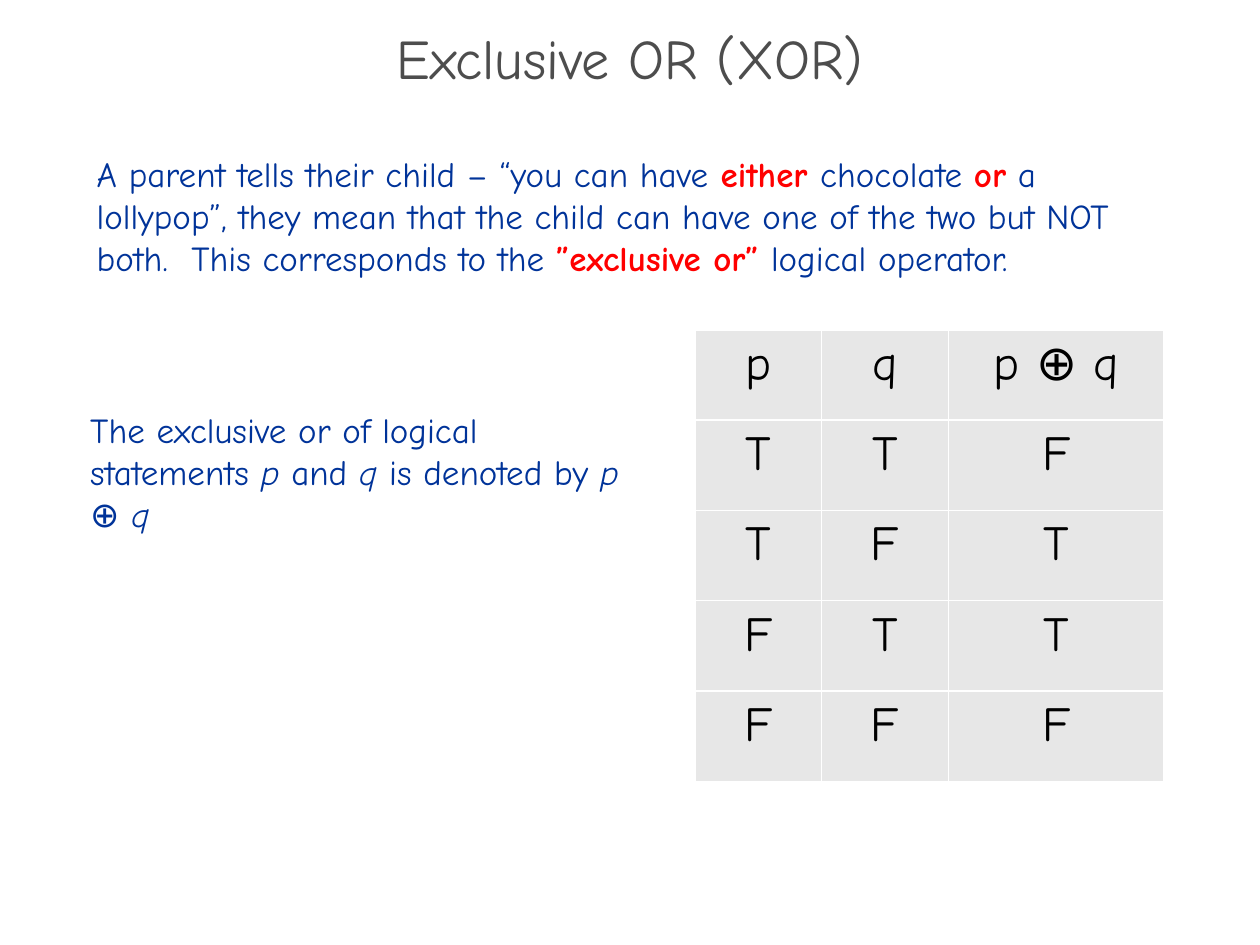
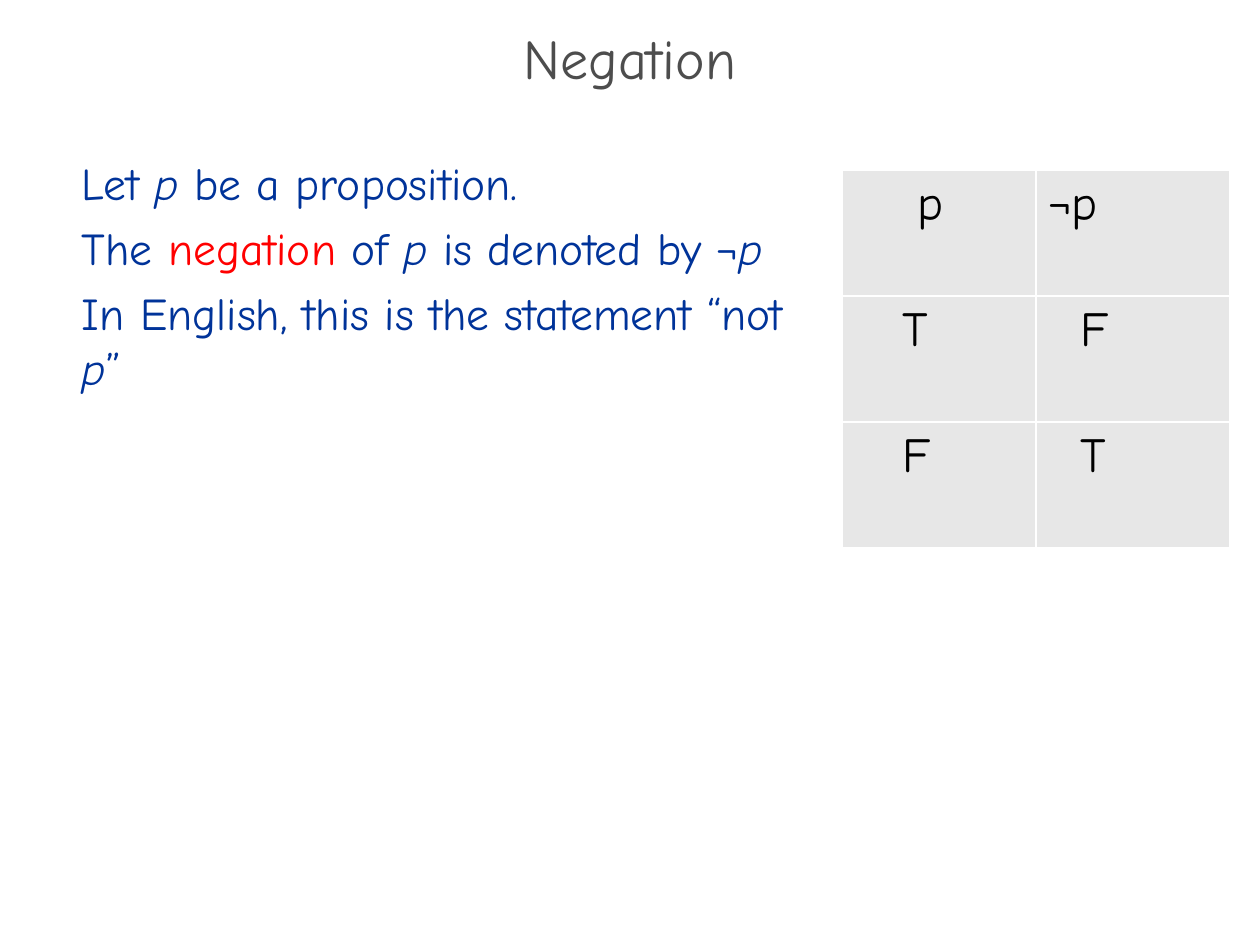
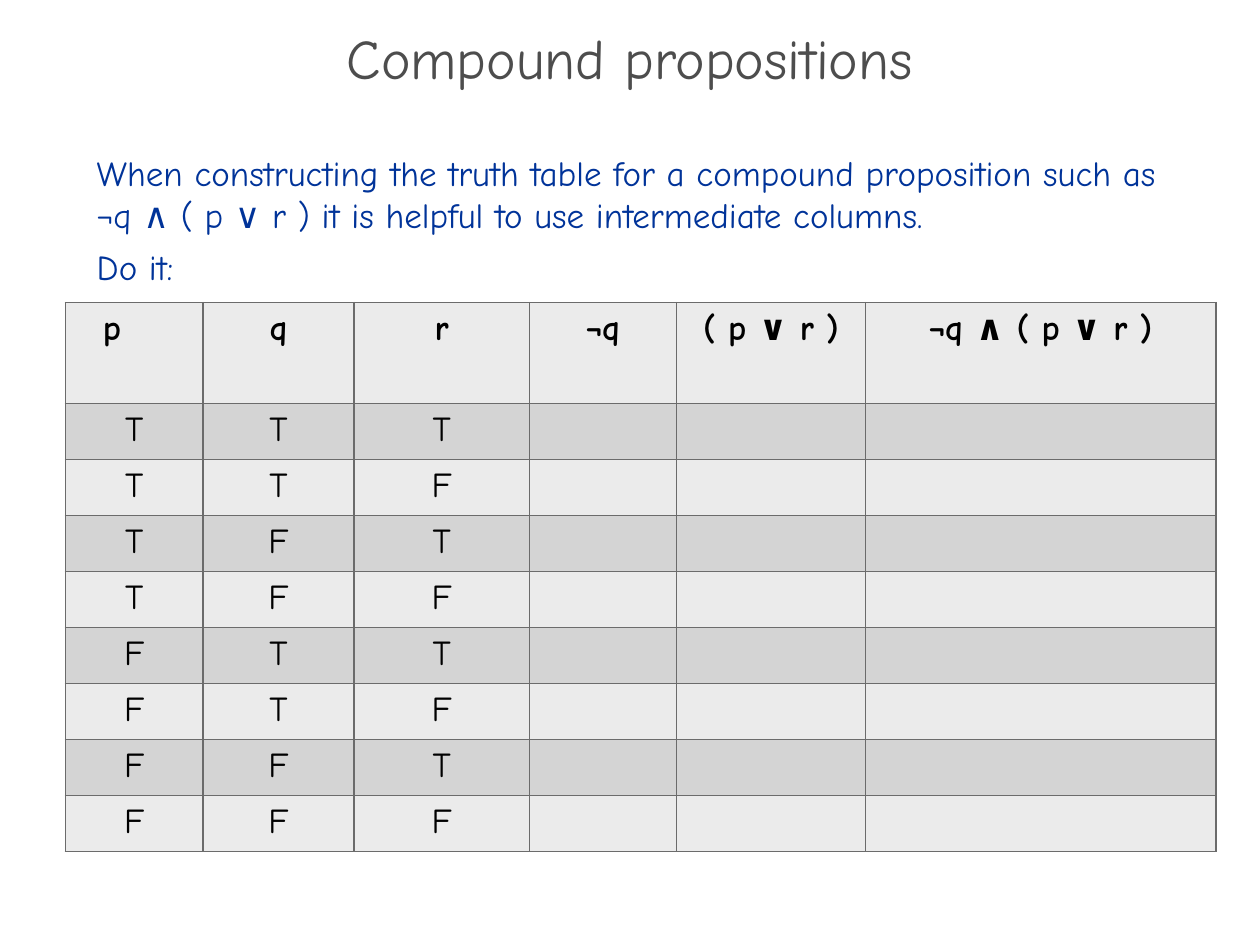
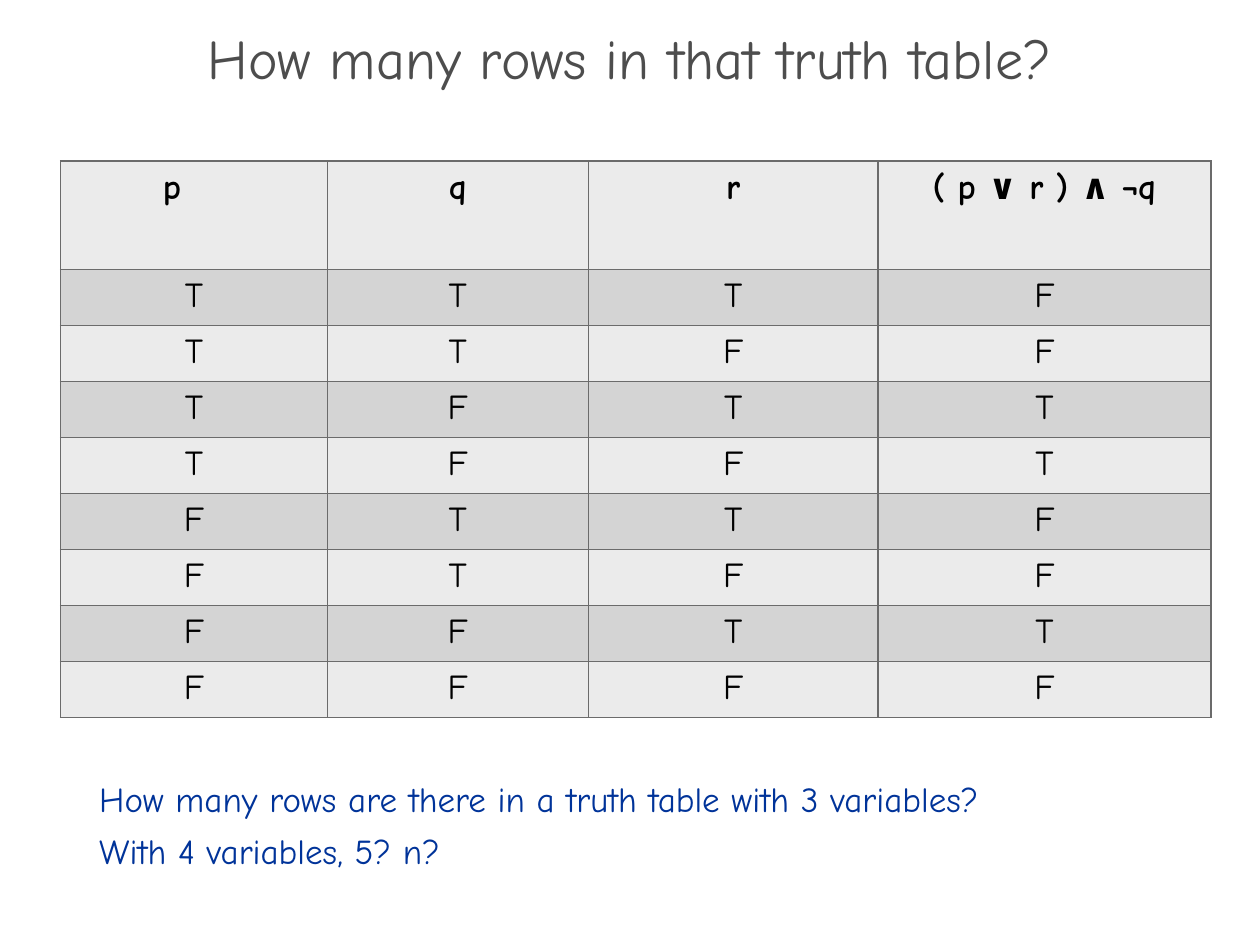
from itertools import product

from pptx import Presentation
from pptx.dml.color import RGBColor
from pptx.enum.text import MSO_ANCHOR, MSO_AUTO_SIZE, PP_ALIGN
from pptx.oxml import parse_xml
from pptx.oxml.ns import nsdecls
from pptx.util import Cm, Pt

# Shared style
FONT = "Comic Neue"
TITLE_GREY = RGBColor(0x4D, 0x4D, 0x4D)
TEXT_BLUE = RGBColor(0x00, 0x33, 0x99)
ACCENT_RED = RGBColor(0xFF, 0x00, 0x00)
BLACK = RGBColor(0x00, 0x00, 0x00)
WHITE = RGBColor(0xFF, 0xFF, 0xFF)
PLAIN_GREY = RGBColor(0xE7, 0xE7, 0xE7)
LIGHT_BAND = RGBColor(0xEB, 0xEB, 0xEB)
DARK_BAND = RGBColor(0xD4, 0xD4, 0xD4)
GRID_GREY = RGBColor(0x6B, 0x6B, 0x6B)

ITALIC = {"italic": True}
RED = {"color": ACCENT_RED}
RED_BOLD = {"color": ACCENT_RED, "bold": True}

# Table looks: fills alternate from the header row down
PLAIN_TABLE = {"fills": [PLAIN_GREY], "border": WHITE, "size": 28, "space_before": Pt(5.6)}
BANDED_TABLE = {"fills": [LIGHT_BAND, DARK_BAND], "border": GRID_GREY, "size": 20,
                "header_bold": True}


def set_attributes(target, values):
    for name, value in values.items():
        setattr(target, name, value)


def letter(value):
    return "T" if value else "F"


class Deck:
    def __init__(self):
        self.presentation = Presentation()
        set_attributes(self.presentation,
                       {"slide_width": Cm(25.4), "slide_height": Cm(19.05)})
        self.slide = None

    def add_slide(self, title):
        layout = self.presentation.slide_layouts[1]
        self.slide = self.presentation.slides.add_slide(layout)
        shape = self.slide.shapes.title
        self.place(shape, (0, 0.69, 25.4, 1.27))
        shape.text_frame.vertical_anchor = MSO_ANCHOR.MIDDLE
        self.add_runs(shape.text_frame.paragraphs[0], [title], 32, TITLE_GREY,
                      alignment=PP_ALIGN.CENTER, line_spacing=0.7)

    def place(self, shape, box):
        names = ("left", "top", "width", "height")
        set_attributes(shape, dict(zip(names, map(Cm, box))))
        set_attributes(shape.text_frame, {
            "word_wrap": True, "auto_size": MSO_AUTO_SIZE.NONE,
            "margin_left": Cm(0.25), "margin_right": Cm(0.25),
            "margin_top": Cm(0.13), "margin_bottom": Cm(0.13)})

    def add_runs(self, paragraph, runs, size, color, bold=False, **layout):
        """Runs are plain strings or pairs of text and format values."""
        set_attributes(paragraph, layout)
        for item in runs:
            text, changes = (item, {}) if isinstance(item, str) else item
            values = {"name": FONT, "size": Pt(size), "bold": bold, "color": color, **changes}
            run = paragraph.add_run()
            run.text = text
            run.font.color.rgb = values.pop("color")
            set_attributes(run.font, values)

    def fill_text(self, shape, box, paragraphs, size):
        self.place(shape, box)
        frame = shape.text_frame
        frame.vertical_anchor = MSO_ANCHOR.TOP
        for index, runs in enumerate(paragraphs):
            paragraph = frame.add_paragraph() if index else frame.paragraphs[0]
            self.add_runs(paragraph, runs, size, TEXT_BLUE,
                          space_before=Pt(0), space_after=Pt(6))
            properties = paragraph._p.get_or_add_pPr()
            properties.set("marL", "0")
            properties.set("indent", "0")
            properties.append(parse_xml(f"<a:buNone {nsdecls('a')}/>"))

    def add_body(self, box, paragraphs, size=20):
        self.fill_text(self.slide.placeholders[1], box, paragraphs, size)

    def add_text(self, box, paragraphs, size=20, margin_top=0.13):
        shape = self.slide.shapes.add_textbox(*map(Cm, box))
        self.fill_text(shape, box, paragraphs, size)
        shape.text_frame.margin_top = Cm(margin_top)

    def add_table(self, left, top, widths, heights, rows, look,
                  alignment=PP_ALIGN.CENTER, indents=None):
        """Indents map (row, column) to left and right paragraph margins in cm."""
        frame = self.slide.shapes.add_table(
            len(rows), len(widths), Cm(left), Cm(top), Cm(sum(widths)), Cm(sum(heights)))
        table = frame.table
        set_attributes(table, {"first_row": False, "horz_banding": False})
        for column, width in zip(table.columns, widths):
            column.width = Cm(width)
        for row_index, (row, height, texts) in enumerate(zip(table.rows, heights, rows)):
            row.height = Cm(height)
            for column_index, text in enumerate(texts):
                cell = row.cells[column_index]
                self.style_cell(cell, look["fills"][row_index % len(look["fills"])],
                                look["border"])
                if not text:
                    continue
                paragraph = cell.text_frame.paragraphs[0]
                self.add_runs(paragraph, [text], look["size"], BLACK,
                              bold=look.get("header_bold", False) and row_index == 0,
                              alignment=alignment, space_before=look.get("space_before"))
                margins = (indents or {}).get((row_index, column_index), (0, 0))
                properties = paragraph._p.get_or_add_pPr()
                for name, margin in zip(("marL", "marR"), margins):
                    properties.set(name, str(Cm(margin)))

    def style_cell(self, cell, fill, border):
        cell.fill.solid()
        cell.fill.fore_color.rgb = fill
        properties = cell._tc.get_or_add_tcPr()
        for index, side in enumerate(("lnL", "lnR", "lnT", "lnB")):
            properties.insert(index, parse_xml(
                f'<a:{side} {nsdecls("a")} w="{Pt(1)}"><a:solidFill>'
                f'<a:srgbClr val="{border}"/></a:solidFill></a:{side}>'))


def add_exclusive_or(deck):
    deck.add_slide("Exclusive OR (XOR)")
    deck.add_body((1.7, 2.95, 21.92, 3.61), [[
        "A parent tells their child – “you can have ", ("either ", RED_BOLD), "chocolate ",
        ("or", RED_BOLD),
        " a lollypop”, they mean that the child can have one of the two but NOT both.  "
        "This corresponds to the ",
        ("”exclusive or” ", RED_BOLD), "logical operator."]])
    rows = [("p", "q", "p ⊕ q")]
    rows += [(p, q, letter(p != q)) for p, q in product("TF", repeat=2)]
    deck.add_table(14.02, 6.65, [2.54, 2.56, 4.35], [1.82] * 5, rows, PLAIN_TABLE)
    deck.add_text((1.57, 7.04, 11.51, 4.47), [[
        "The exclusive or of logical statements ", ("p", ITALIC), " and ", ("q", ITALIC),
        " is denoted by ", ("p ", ITALIC), "⊕ ", ("q", ITALIC)]], margin_top=1.19)


def add_negation(deck):
    deck.add_slide("Negation")
    deck.add_body((1.4, 3, 15.44, 12.57), [
        ["Let ", ("p", ITALIC), " be a proposition."],
        ["The ", ("negation", RED), " of ", ("p", ITALIC), " is denoted by ¬", ("p", ITALIC)],
        ["In English, this is the statement “not ", ("p", ITALIC), "”"]], size=26)
    step = 0.32
    indents = {(0, 0): (4 * step, 0)}
    for row in (1, 2):
        indents[row, 0] = (3 * step, 0)
        indents[row, 1] = (2 * step, 0)
    deck.add_table(16.97, 3.43, [3.91] * 2, [2.54] * 3, [("p", "¬p"), "TF", "FT"],
                   PLAIN_TABLE, alignment=PP_ALIGN.LEFT, indents=indents)


# The first header of both three-variable tables sits left of centre
HEADER_INDENT = {(0, 0): (0, 0.89)}


def add_compound(deck):
    deck.add_slide("Compound propositions")
    deck.add_body((1.7, 2.92, 22.12, 15.06), [
        ["When constructing the truth table for a compound proposition such as "
         "¬q ∧ ( p ∨ r ) it is helpful to use intermediate columns."],
        ["Do it:"]])
    rows = [("p", "q", "r", "¬q", "( p ∨ r )", "¬q ∧ ( p ∨ r )")]
    rows += [values + ("",) * 3 for values in product("TF", repeat=3)]
    deck.add_table(1.32, 6.1, [2.77, 3.05, 3.53, 2.97, 3.81, 7.06], [2.03] + [1.13] * 8,
                   rows, BANDED_TABLE, indents=HEADER_INDENT)


def add_row_count(deck):
    deck.add_slide("How many rows in that truth table?")
    deck.add_body((1.75, 15.54, 21.74, 2.44), [
        ["How many rows are there in a truth table with 3 variables?"],
        ["With 4 variables, 5? n?"]])
    rows = [("p", "q", "r", "( p ∨ r ) ∧ ¬q")]
    rows += [(p, q, r, letter("T" in (p, r) and q == "F"))
             for p, q, r in product("TF", repeat=3)]
    deck.add_table(1.22, 3.25, [5.38, 5.26, 5.84, 6.71], [2.18] + [1.13] * 8,
                   rows, BANDED_TABLE, indents=HEADER_INDENT)


def main():
    deck = Deck()
    for build in (add_exclusive_or, add_negation, add_compound, add_row_count):
        build(deck)
    deck.presentation.save("out.pptx")


if __name__ == "__main__":
    main()
